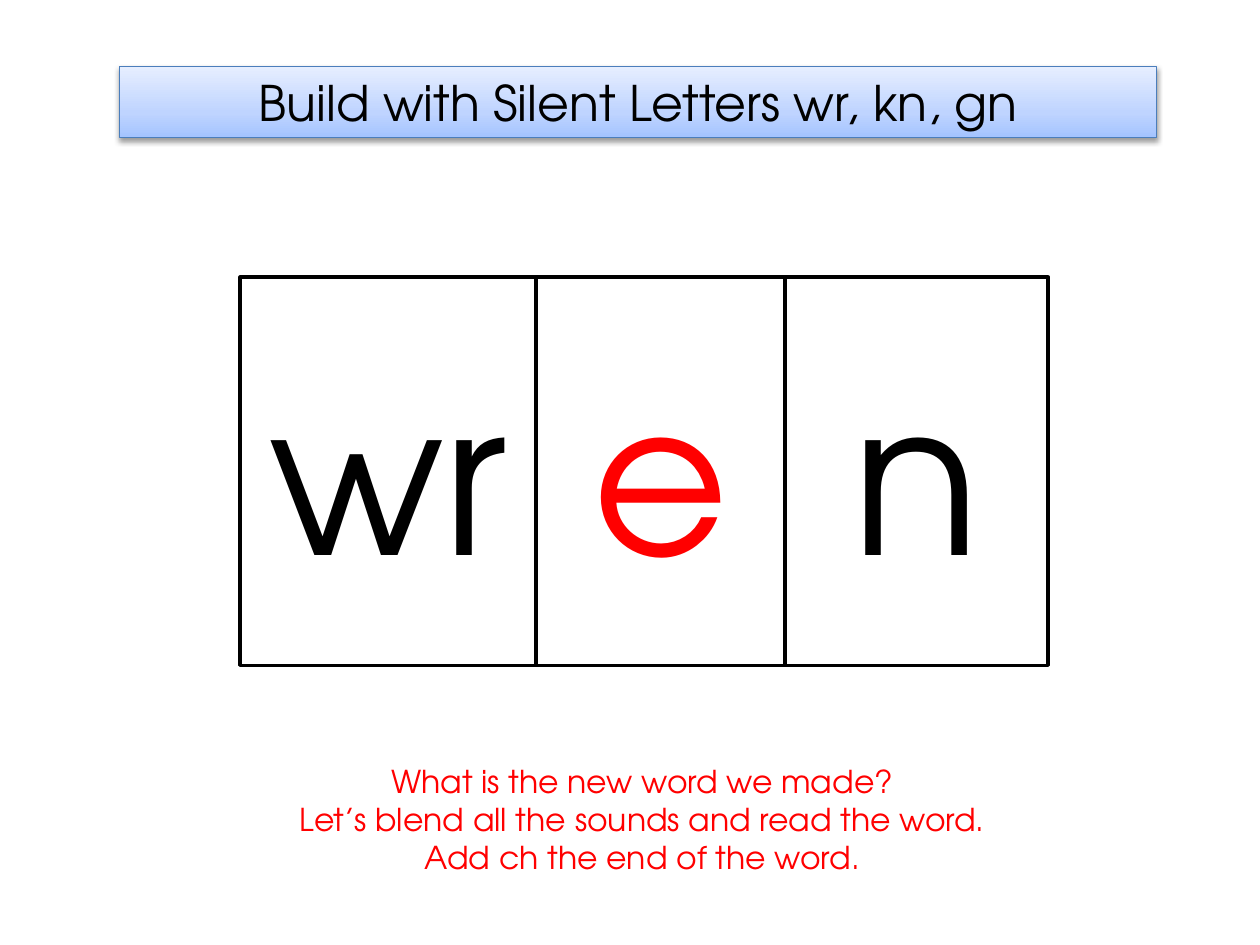
from typing import NamedTuple

from pptx import Presentation
from pptx import oxml
from pptx import util as u
from pptx.dml.color import RGBColor
from pptx.enum import shapes, text
from pptx.oxml import ns

Pt = u.Pt
FONT = "TeX Gyre Adventor"
BLACK = RGBColor(0x00, 0x00, 0x00)
WHITE = RGBColor(0xFF, 0xFF, 0xFF)
RED = RGBColor(0xFF, 0x00, 0x00)
BANNER_LINE = RGBColor(0x4B, 0x7E, 0xBC)
BANNER_STOPS = (
    (0, RGBColor(0xA4, 0xC4, 0xFF)),
    (35, RGBColor(0xBF, 0xD4, 0xFF)),
    (100, RGBColor(0xE6, 0xEE, 0xFF)),
)

TILES_LEFT, TILES_TOP, TILE_HEIGHT = 137.2, 158.4, 221.8


class Tile(NamedTuple):
    letters: str
    width: float
    color: RGBColor


TILES = (
    Tile("wr", 169, BLACK),
    Tile("e", 142.4, RED),
    Tile("n", 150.4, BLACK),
)
PROMPTS = (
    "What is the new word we made?",
    "Let’s blend all the sounds and read the word.",
    "Add ch the end of the word.",
)


def write_lines(tf, lines: tuple[str, ...], size: float, color: RGBColor) -> None:
    tf.word_wrap = True
    for i, line in enumerate(lines):
        p = tf.add_paragraph() if i else tf.paragraphs[0]
        p.alignment = text.PP_ALIGN.CENTER
        r = p.add_run()
        r.text = line
        r.font.name = FONT
        r.font.size = Pt(size)
        r.font.color.rgb = color


def add_box(s, left: float, top: float, width: float, height: float,
            line: RGBColor, weight: float):
    sp = s.shapes.add_shape(shapes.MSO_SHAPE.RECTANGLE,
                            Pt(left), Pt(top), Pt(width), Pt(height))
    sp.shadow.inherit = False
    sp.line.color.rgb = line
    sp.line.width = Pt(weight)
    sp.text_frame.vertical_anchor = text.MSO_ANCHOR.MIDDLE
    return sp


def add_tiles(s) -> None:
    left = TILES_LEFT
    for tile in TILES:
        sp = add_box(s, left, TILES_TOP, tile.width, TILE_HEIGHT, BLACK, 2)
        sp.fill.solid()
        sp.fill.fore_color.rgb = WHITE
        write_lines(sp.text_frame, (tile.letters,), 120, tile.color)
        left += tile.width


def add_prompts(s) -> None:
    sp = s.shapes.add_textbox(Pt(116), Pt(432), Pt(502), Pt(72.7))
    write_lines(sp.text_frame, PROMPTS, 18, RED)
    sp.text_frame.auto_size = text.MSO_AUTO_SIZE.SHAPE_TO_FIT_TEXT


def style_banner(sp) -> None:
    """Give the banner its three-stop gradient and soft shadow below."""
    sp.fill.gradient()
    sp.fill.gradient_angle = 90
    stops = sp._element.spPr.find(ns.qn("a:gradFill")).find(ns.qn("a:gsLst"))
    for stop in list(stops):
        stops.remove(stop)
    for position, color in BANNER_STOPS:
        stops.append(oxml.parse_xml(
            f'<a:gs {ns.nsdecls("a")} pos="{position * 1000}">'
            f'<a:srgbClr val="{color}"/></a:gs>'))
    sp._element.spPr.find(ns.qn("a:effectLst")).append(oxml.parse_xml(
        f'<a:outerShdw {ns.nsdecls("a")} blurRad="{Pt(3.1)}" dist="{Pt(1.6)}" '
        'dir="5400000" rotWithShape="0"><a:srgbClr val="000000">'
        '<a:alpha val="38000"/></a:srgbClr></a:outerShdw>'))


def add_banner(s) -> None:
    sp = add_box(s, 68.4, 38.2, 592.6, 40.3, BANNER_LINE, 0.75)
    style_banner(sp)
    write_lines(sp.text_frame, ("Build with Silent Letters wr, kn, gn",), 28, BLACK)


def main() -> None:
    prs = Presentation()
    prs.slide_width, prs.slide_height = Pt(720), Pt(540)
    s = prs.slides.add_slide(prs.slide_layouts[6])
    add_tiles(s)
    add_prompts(s)
    add_banner(s)
    prs.save("out.pptx")


if __name__ == "__main__":
    main()
